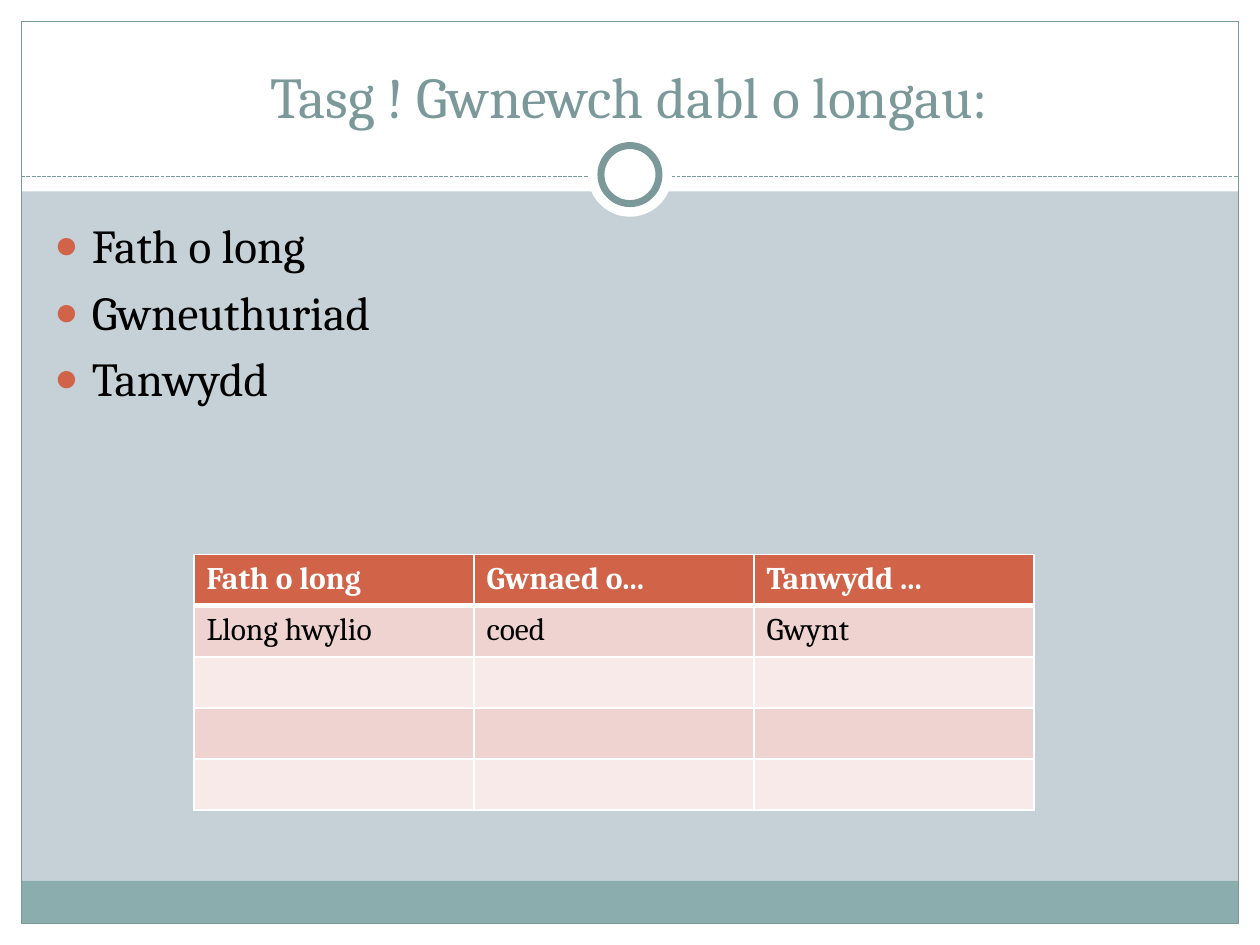
import pptx
import pptx.util
import pptx.dml.color
import pptx.enum.dml
import pptx.enum.shapes
import pptx.enum.text
import pptx.oxml
import pptx.oxml.ns

Cm, Pt = pptx.util.Cm, pptx.util.Pt
RGBColor = pptx.dml.color.RGBColor
SHAPE = pptx.enum.shapes.MSO_SHAPE

WHITE = RGBColor(0xFF, 0xFF, 0xFF)
BLACK = RGBColor(0, 0, 0)
BACKGROUND = RGBColor(0xC5, 0xD1, 0xD7)
TEAL = RGBColor(0x8C, 0xAD, 0xAE)
GREY_TEAL = RGBColor(0x7C, 0x99, 0x9A)
RUST = RGBColor(0xD1, 0x63, 0x49)
BANDS = [RGBColor(0xEE, 0xD3, 0xD0), RGBColor(0xF7, 0xEA, 0xE9)]

FONT = "Cambria"
WIDTH, HEIGHT, MARGIN = 25.4, 19.05, 0.43
NS = pptx.oxml.ns.nsdecls("a")

ITEMS = ["Fath o long", "Gwneuthuriad", "Tanwydd"]
SHIPS = [
    ["Fath o long", "Gwnaed o...", "Tanwydd ..."],
    ["Llong hwylio", "coed", "Gwynt"],
    [""] * 3,
    [""] * 3,
    [""] * 3,
]


def place(s, box):
    s.left, s.top, s.width, s.height = (Cm(v) for v in box)


def add_run(p, text, size, color, bold=False):
    r = p.add_run()
    r.text = text
    r.font.name, r.font.size, r.font.bold = FONT, Pt(size), bold
    r.font.color.rgb = color


def add_plain(slide, kind, box, fill=None, line=None, weight=0.75):
    s = slide.shapes.add_shape(kind, *(Cm(v) for v in box))
    s.shadow.inherit = False
    if fill is None:
        s.fill.background()
    else:
        s.fill.solid()
        s.fill.fore_color.rgb = fill
    if line is None:
        s.line.fill.background()
    else:
        s.line.color.rgb = line
        s.line.width = Pt(weight)


def add_frame(slide, box):
    """White margins, footer band, outline, dashed rule and ring."""
    x, y, w, h = box
    right, bottom = x + w, y + h
    header, rule_y, band = 3.86, y + 3.56, 0.86
    inner_w, inner_h = w - 2 * MARGIN, h - 2 * MARGIN
    for edge in [
        (x, bottom - MARGIN, w, MARGIN),
        (x, y, w, header),
        (x, y, MARGIN, h),
        (right - MARGIN, y, MARGIN, h),
    ]:
        add_plain(slide, SHAPE.RECTANGLE, edge, WHITE)
    add_plain(slide, SHAPE.RECTANGLE,
              (x + MARGIN, bottom - MARGIN - band, inner_w, band), TEAL)
    add_plain(slide, SHAPE.RECTANGLE,
              (x + MARGIN, y + MARGIN, inner_w, inner_h), line=GREY_TEAL)

    rule = slide.shapes.add_connector(
        pptx.enum.shapes.MSO_CONNECTOR.STRAIGHT,
        Cm(x + MARGIN), Cm(rule_y), Cm(right - MARGIN), Cm(rule_y))
    rule.line.color.rgb = GREY_TEAL
    rule.line.width = Pt(0.75)
    rule.line.dash_style = pptx.enum.dml.MSO_LINE.SQUARE_DOT
    rule._element.spPr.append(pptx.oxml.parse_xml(f"<a:effectLst {NS}/>"))

    center_x, center_y = x + w / 2, y + 3.52
    for size, line in [(1.7, None), (1.17, GREY_TEAL)]:
        add_plain(slide, SHAPE.OVAL,
                  (center_x - size / 2, center_y - size / 2, size, size),
                  WHITE, line, 4)


def fill_title(s, box, text):
    place(s, box)
    tf = s.text_frame
    tf.auto_size = pptx.enum.text.MSO_AUTO_SIZE.NONE
    tf.vertical_anchor = pptx.enum.text.MSO_ANCHOR.BOTTOM
    p = tf.paragraphs[0]
    p.alignment = pptx.enum.text.PP_ALIGN.CENTER
    add_run(p, text, 33, GREY_TEAL)


def fill_list(s, box, items):
    place(s, box)
    tf = s.text_frame
    tf.auto_size = pptx.enum.text.MSO_AUTO_SIZE.NONE
    for i, item in enumerate(items):
        p = tf.add_paragraph() if i else tf.paragraphs[0]
        add_run(p, item, 27, BLACK)
        pPr = p._p.get_or_add_pPr()
        pPr.set("marL", str(Cm(0.76)))
        pPr.set("indent", str(-Cm(0.76)))
        for bullet in [
            f'<a:buClr {NS}><a:srgbClr val="{RUST}"/></a:buClr>',
            f'<a:buSzPct {NS} val="85000"/>',
            f'<a:buChar {NS} char="●"/>',
        ]:
            pPr.append(pptx.oxml.parse_xml(bullet))


def set_borders(cell, top, bottom):
    tcPr = cell._tc.get_or_add_tcPr()
    weights = {"L": 1, "R": 1, "T": top, "B": bottom}
    for i, (side, weight) in enumerate(weights.items()):
        tcPr.insert(i, pptx.oxml.parse_xml(
            f'<a:ln{side} {NS} w="{Pt(weight)}"><a:solidFill>'
            f'<a:srgbClr val="{WHITE}"/></a:solidFill></a:ln{side}>'))


def add_ship_table(slide, box, rows):
    table = slide.shapes.add_table(
        len(rows), len(rows[0]), *(Cm(v) for v in box)).table
    for i, row in enumerate(rows):
        header = i == 0
        for j, text in enumerate(row):
            cell = table.cell(i, j)
            cell.fill.solid()
            cell.fill.fore_color.rgb = RUST if header else BANDS[(i - 1) % 2]
            set_borders(cell, 3 if i == 1 else 1, 3 if header else 1)
            if text:
                add_run(cell.text_frame.paragraphs[0], text, 18,
                        WHITE if header else BLACK, header)


def main():
    prs = pptx.Presentation()
    prs.slide_width, prs.slide_height = Cm(WIDTH), Cm(HEIGHT)
    slide = prs.slides.add_slide(prs.slide_layouts[1])
    slide.background.fill.solid()
    slide.background.fill.fore_color.rgb = BACKGROUND
    title, body = slide.placeholders

    add_frame(slide, (0, 0, WIDTH, HEIGHT))
    for s in (title, body):  # bring the text in front of the frame
        slide.shapes._spTree.append(s._element)
    fill_title(title, (0.84, 0.64, 23.7, 2.11), "Tasg ! Gwnewch dabl o longau:")
    fill_list(body, (0.84, 4.24, 23.62, 12.7), ITEMS)
    add_ship_table(slide, (3.91, 11.18, 16.94, 5.15), SHIPS)
    prs.save("out.pptx")


if __name__ == "__main__":
    main()
